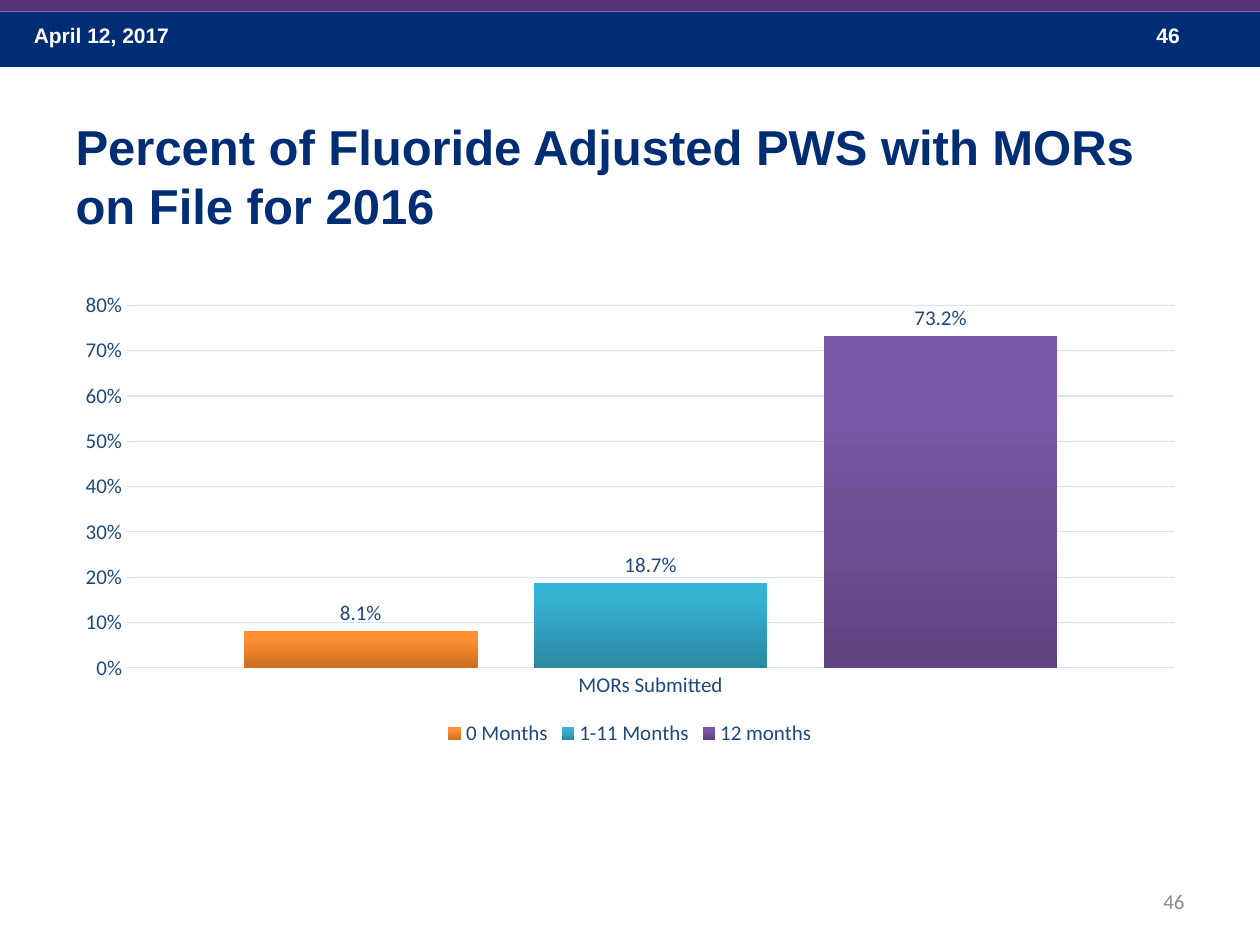
from copy import deepcopy

from pptx import Presentation
from pptx.chart.data import CategoryChartData
from pptx.dml.color import RGBColor
from pptx.enum.chart import XL_CHART_TYPE as ChartType
from pptx.enum.chart import XL_LABEL_POSITION as LabelPosition
from pptx.enum.chart import XL_LEGEND_POSITION as LegendPosition
from pptx.enum.chart import XL_TICK_MARK as TickMark
from pptx.enum.shapes import MSO_SHAPE as Preset
from pptx.enum.text import MSO_ANCHOR as Anchor
from pptx.enum.text import PP_ALIGN as Align
from pptx.oxml.ns import qn
from pptx.util import Inches, Pt

WIDTH, HEIGHT = 10, 7.5
COLORS = {
    "navy": "002D73", "purple": "553278", "white": "FFFFFF",
    "chart text": "1F497D", "grid": "D4E3F4", "page number": "8C8C8C",
}
HEADER_FONT = {"name": "Arial", "size": Pt(12), "bold": True}
TITLE_FONT = {"name": "Arial", "size": Pt(28), "bold": True}
BODY_FONT = {"name": "Calibri", "size": Pt(12), "bold": False}
MONTHS = [
    ("0 Months", 0.081, ("CC6E20", "FF9034", "FF9136")),
    ("1-11 Months", 0.187, ("2A88A2", "37B1D2", "34B4D6")),
    ("12 months", 0.732, ("5F4480", "7B58A6", "7C57A8")),
]
GRADIENT_POSITIONS = (0, 0.8, 1)


def within(box, left, top, width, height):
    """Return the part of a box that the given shares of it describe."""
    x, y, w, h = box
    return x + left * w, y + top * h, width * w, height * h


def apply(target, values):
    """Set each attribute of the target from a dict."""
    for key, value in values.items():
        setattr(target, key, value)


def style_font(font, values, color):
    """Give a font its format values and a named colour."""
    apply(font, values)
    font.color.rgb = RGBColor.from_string(COLORS[color])


def add_band(slide, box, color):
    """Add a plain filled band."""
    band = slide.shapes.add_shape(Preset.RECTANGLE, *map(Inches, box))
    band.shadow.inherit = False
    band.fill.solid()
    band.fill.fore_color.rgb = RGBColor.from_string(COLORS[color])
    band.line.fill.background()


def add_label(slide, box, text, font, color, anchor=Anchor.TOP, align=Align.LEFT):
    """Add one line of text in a box."""
    frame = slide.shapes.add_textbox(*map(Inches, box)).text_frame
    apply(frame, {"word_wrap": True, "vertical_anchor": anchor})
    line = frame.paragraphs[0]
    line.alignment = align
    run = line.add_run()
    run.text = text
    style_font(run.font, font, color)


def add_header(slide, box, date, page):
    """Place the two bands, the date and the page number at the top."""
    add_band(slide, within(box, 0, 0.22, 1, 0.78), "navy")
    add_label(slide, within(box, 0.017, 0.29, 0.233, 0.71), date, HEADER_FONT, "white")
    add_label(slide, within(box, 0.908, 0.29, 0.075, 0.71), page, HEADER_FONT, "white")
    add_band(slide, within(box, 0, 0, 1, 0.22), "purple")


def place_title(slide, box, text):
    """Place and format the title."""
    title = slide.shapes.title
    apply(title, dict(zip(("left", "top", "width", "height"), map(Inches, box))))
    title.text = text
    apply(title.text_frame, {"word_wrap": True, "vertical_anchor": Anchor.MIDDLE})
    heading = title.text_frame.paragraphs[0]
    heading.alignment = Align.LEFT
    style_font(heading.runs[0].font, TITLE_FONT, "navy")


def style_line(line):
    """Give a chart line the pale grid look."""
    line.color.rgb = RGBColor.from_string(COLORS["grid"])
    line.width = Pt(0.75)


def fill_gradient(series, shades):
    """Fill a series with three shades, darkest at the bottom."""
    fill = series.format.fill
    fill.gradient()
    fill.gradient_angle = 90
    stop_list = series._element.find(".//" + qn("a:gsLst"))
    stop_list.append(deepcopy(stop_list[-1]))
    for stop, position, shade in zip(fill.gradient_stops, GRADIENT_POSITIONS, shades):
        stop.position = position
        stop.color.rgb = RGBColor.from_string(shade)


def add_months_chart(slide, box):
    """Add the column chart of reports on file."""
    data = CategoryChartData(number_format="0.0%")
    data.categories = ["MORs Submitted"]
    for name, share, _ in MONTHS:
        data.add_series(name, [share])
    chart = slide.shapes.add_chart(
        ChartType.COLUMN_CLUSTERED, *map(Inches, box), data).chart
    apply(chart, {"has_title": False, "has_legend": True})
    style_font(chart.font, BODY_FONT, "chart text")
    apply(chart.legend, {"position": LegendPosition.BOTTOM, "include_in_layout": False})

    for axis in (chart.category_axis, chart.value_axis):
        apply(axis, {"major_tick_mark": TickMark.NONE, "minor_tick_mark": TickMark.NONE})
        style_font(axis.tick_labels.font, BODY_FONT, "chart text")
    style_font(chart.legend.font, BODY_FONT, "chart text")
    style_line(chart.category_axis.format.line)
    shares = chart.value_axis
    apply(shares, {"minimum_scale": 0, "maximum_scale": 0.8, "major_unit": 0.1,
                   "has_major_gridlines": True})
    apply(shares.tick_labels, {"number_format": "0%", "number_format_is_linked": False})
    shares.format.line.fill.background()
    style_line(shares.major_gridlines.format.line)

    columns = chart.plots[0]
    apply(columns, {"gap_width": 100, "overlap": -24, "vary_by_categories": False})
    for series, (_, _, shades) in zip(columns.series, MONTHS):
        fill_gradient(series, shades)
        labels = series.data_labels
        apply(labels, {"show_value": True, "position": LabelPosition.OUTSIDE_END,
                       "number_format": "0.0%", "number_format_is_linked": False})
        style_font(labels.font, BODY_FONT, "chart text")


def main():
    """Build and save the slide."""
    deck = Presentation()
    apply(deck, {"slide_width": Inches(WIDTH), "slide_height": Inches(HEIGHT)})
    slide = deck.slides.add_slide(deck.slide_layouts[5])
    page = (0, 0, WIDTH, HEIGHT)
    add_header(slide, within(page, 0, -0.004, 1, 0.075), "April 12, 2017", "46")
    place_title(slide, within(page, 0.05, 0.123, 0.9, 0.125),
                "Percent of Fluoride Adjusted PWS with MORs on File for 2016")
    add_months_chart(slide, within(page, 0.05, 0.3, 0.9, 0.495))
    add_label(slide, within(page, 0.717, 0.927, 0.233, 0.053), "46", BODY_FONT,
              "page number", Anchor.MIDDLE, Align.RIGHT)
    deck.save("out.pptx")


if __name__ == "__main__":
    main()
